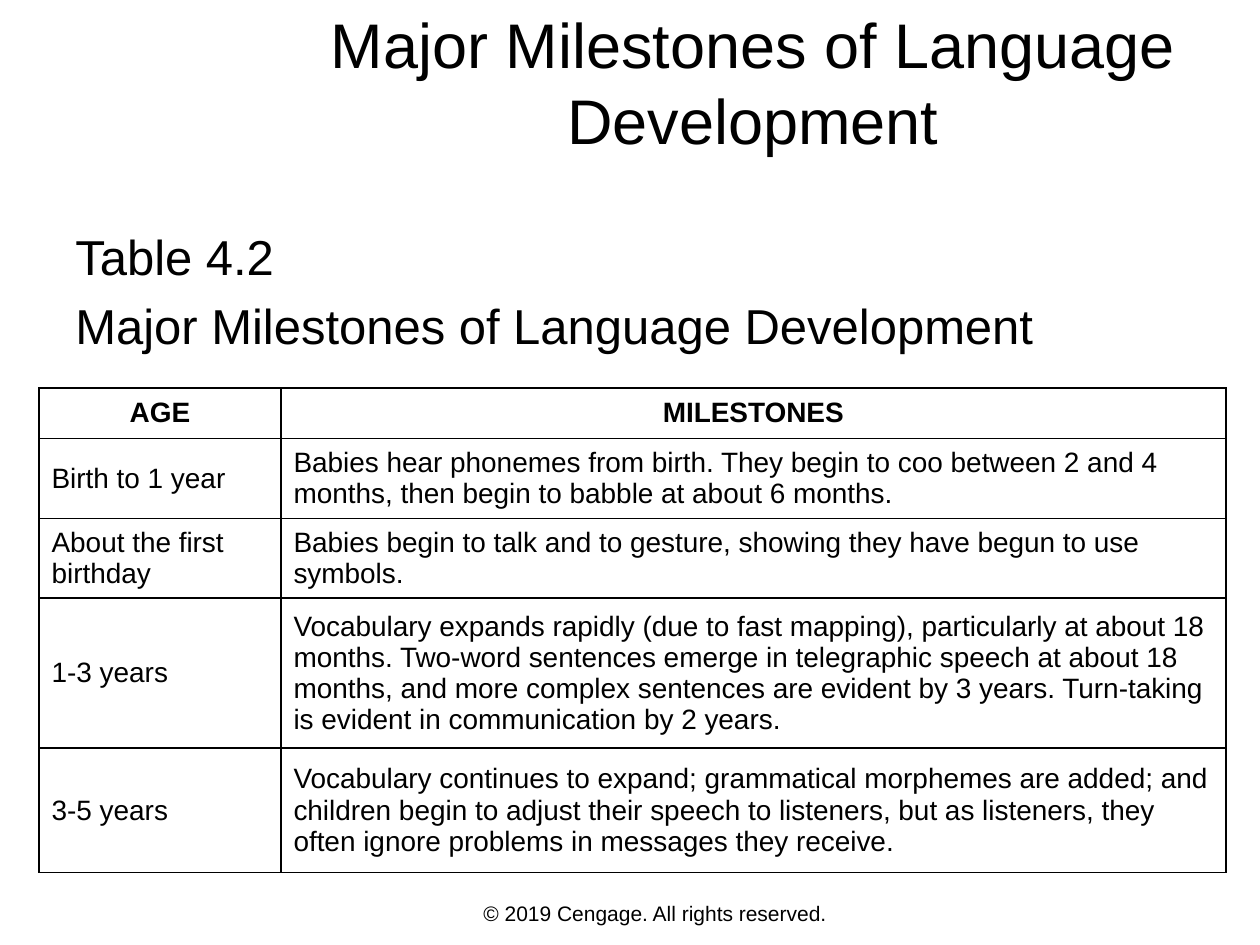
from lxml import etree
from pptx import Presentation
from pptx.dml.color import RGBColor
from pptx.enum import text
from pptx.oxml.ns import qn
from pptx.util import Inches, Pt

BLACK, WHITE = "000000", "FFFFFF"
COLUMNS = (1.92, 7.5)
ROW_HEIGHTS = (0.4, 0.63, 0.63, 1.19, 0.99)
MILESTONES = (
    ("AGE", "MILESTONES"),
    ("Birth to 1 year",
     "Babies hear phonemes from birth. They begin to coo between 2 and 4 "
     "months, then begin to babble at about 6 months."),
    ("About the first birthday",
     "Babies begin to talk and to gesture, showing they have begun to use "
     "symbols."),
    ("1-3 years",
     "Vocabulary expands rapidly (due to fast mapping), particularly at about "
     "18 months. Two-word sentences emerge in telegraphic speech at about 18 "
     "months, and more complex sentences are evident by 3 years. Turn-taking "
     "is evident in communication by 2 years."),
    ("3-5 years",
     "Vocabulary continues to expand; grammatical morphemes are added; and "
     "children begin to adjust their speech to listeners, but as listeners, "
     "they often ignore problems in messages they receive."),
)


def color(value):
    return RGBColor.from_string(value)


def style(p, size, align=text.PP_ALIGN.LEFT, bold=False):
    p.alignment = align
    for r in p.runs:
        r.font.name = "Arial"
        r.font.size = Pt(size)
        r.font.bold = bold
        r.font.color.rgb = color(BLACK)


def add_text(s, box, lines, size, align=text.PP_ALIGN.LEFT,
             anchor=text.MSO_ANCHOR.TOP):
    tf = s.shapes.add_textbox(*map(Inches, box)).text_frame
    tf.word_wrap = True
    tf.vertical_anchor = anchor
    tf.text = "\n".join(lines)
    for i, p in enumerate(tf.paragraphs):
        style(p, size, align)
        if i:
            p.space_before = Pt(0.2 * size)


def add_borders(cell, width=1):
    tcPr = cell._tc.get_or_add_tcPr()
    for i, side in enumerate(("lnL", "lnR", "lnT", "lnB")):
        ln = etree.Element(qn(f"a:{side}"), w=str(Pt(width)))
        fill = etree.SubElement(ln, qn("a:solidFill"))
        etree.SubElement(fill, qn("a:srgbClr"), val=BLACK)
        tcPr.insert(i, ln)


def add_milestones(s, left, top):
    table = s.shapes.add_table(
        len(ROW_HEIGHTS), len(COLUMNS), Inches(left), Inches(top),
        Inches(sum(COLUMNS)), Inches(sum(ROW_HEIGHTS))).table
    for column, width in zip(table.columns, COLUMNS):
        column.width = Inches(width)
    for i, (row, height) in enumerate(zip(table.rows, ROW_HEIGHTS)):
        row.height = Inches(height)
        align = text.PP_ALIGN.LEFT if i else text.PP_ALIGN.CENTER
        for cell, words in zip(row.cells, MILESTONES[i]):
            cell.text = words
            cell.vertical_anchor = text.MSO_ANCHOR.MIDDLE
            cell.fill.solid()
            cell.fill.fore_color.rgb = color(WHITE)
            style(cell.text_frame.paragraphs[0], 16, align, bold=i == 0)
            add_borders(cell)


def main():
    prs = Presentation()
    prs.slide_width, prs.slide_height = Inches(10), Inches(7.5)
    s = prs.slides.add_slide(prs.slide_layouts[6])
    title = "Major Milestones of Language Development"
    add_text(s, (2.03, 0.07, 7.89, 1.15), [title], 36,
             text.PP_ALIGN.CENTER, text.MSO_ANCHOR.MIDDLE)
    add_text(s, (0.5, 1.75, 9.17, 1.17), ["Table 4.2", title], 28)
    add_milestones(s, 0.31, 3.08)
    add_text(s, (1.65, 7.1, 7.1, 0.3),
             ["© 2019 Cengage. All rights reserved."], 12,
             text.PP_ALIGN.CENTER)
    prs.save("out.pptx")


if __name__ == "__main__":
    main()
